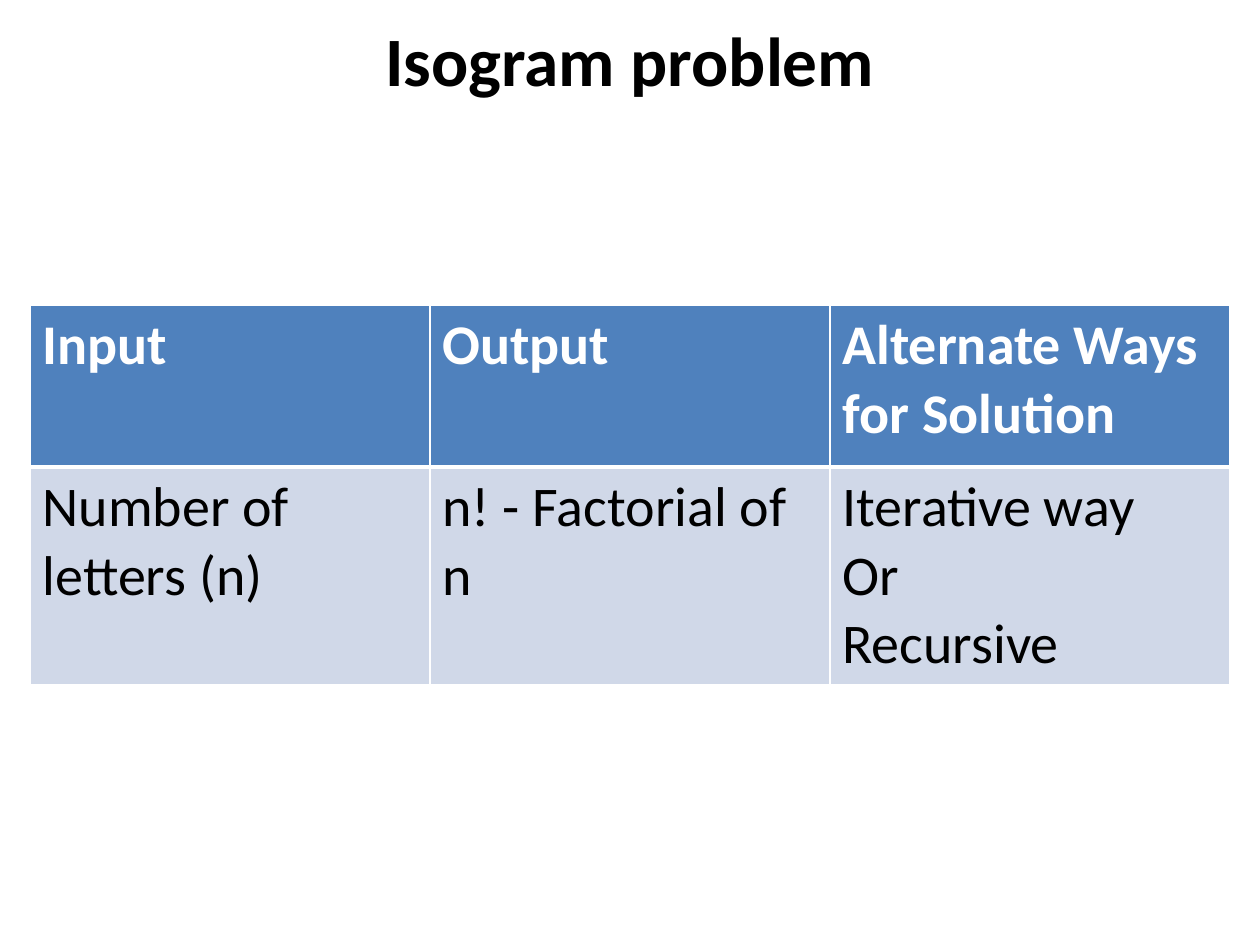
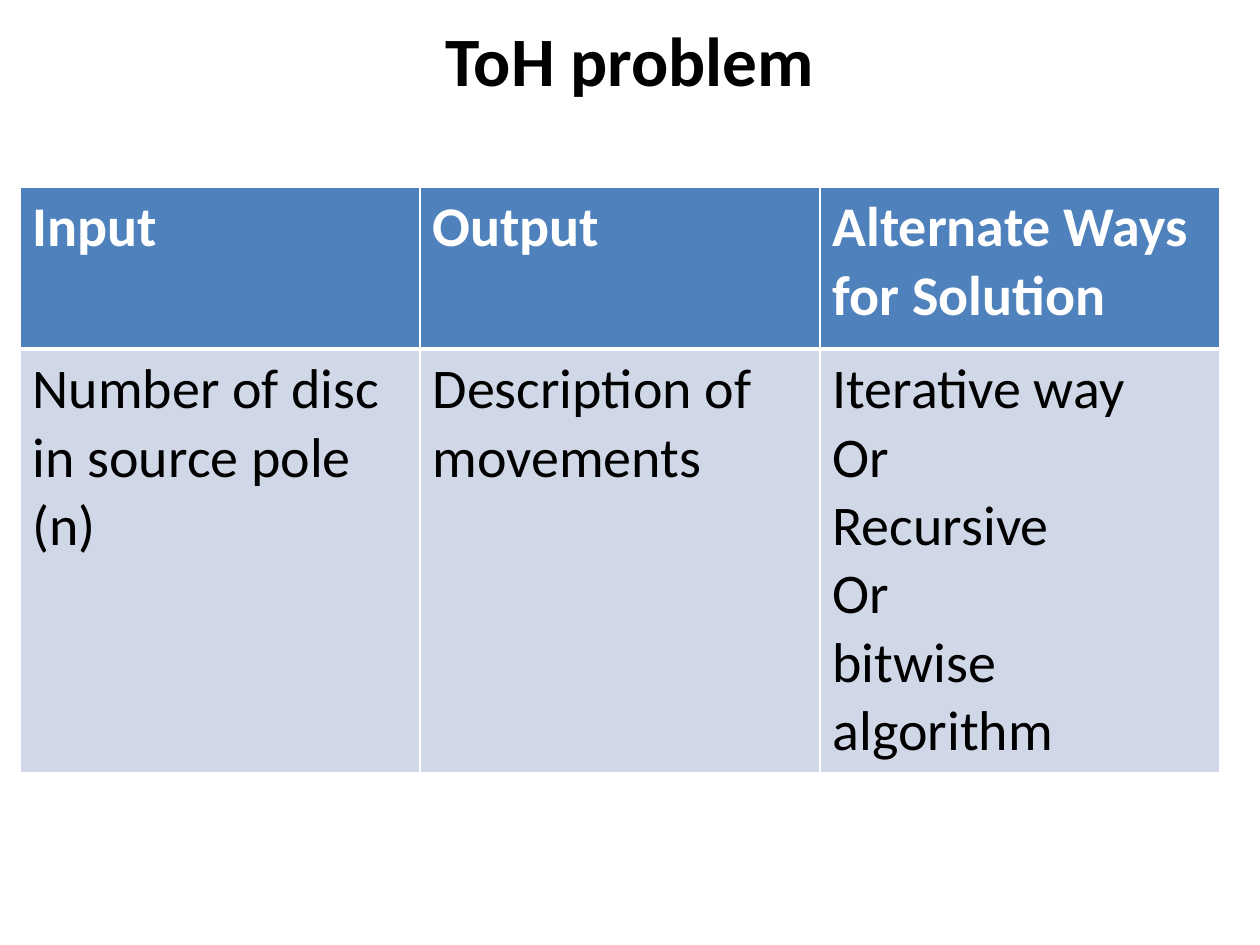
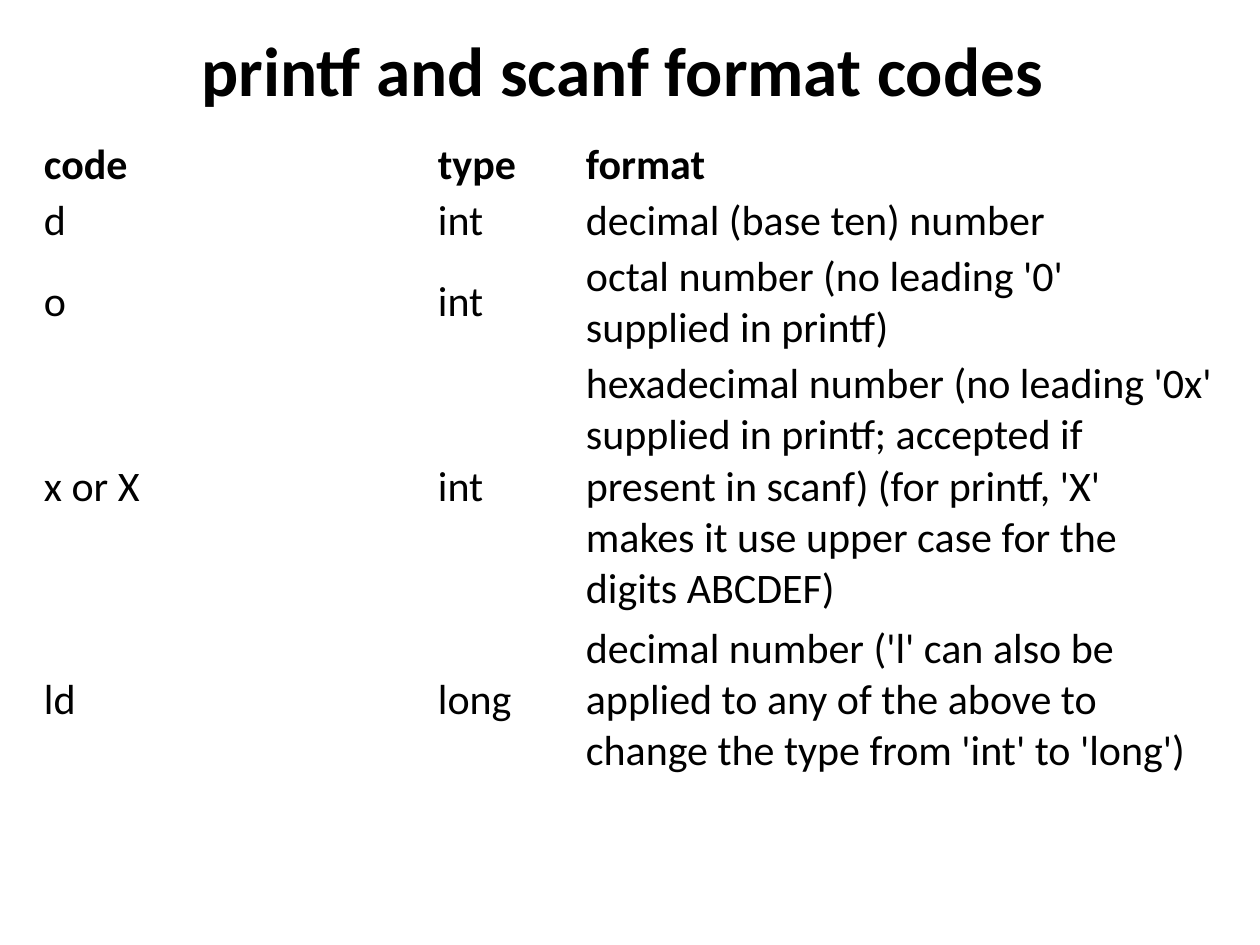
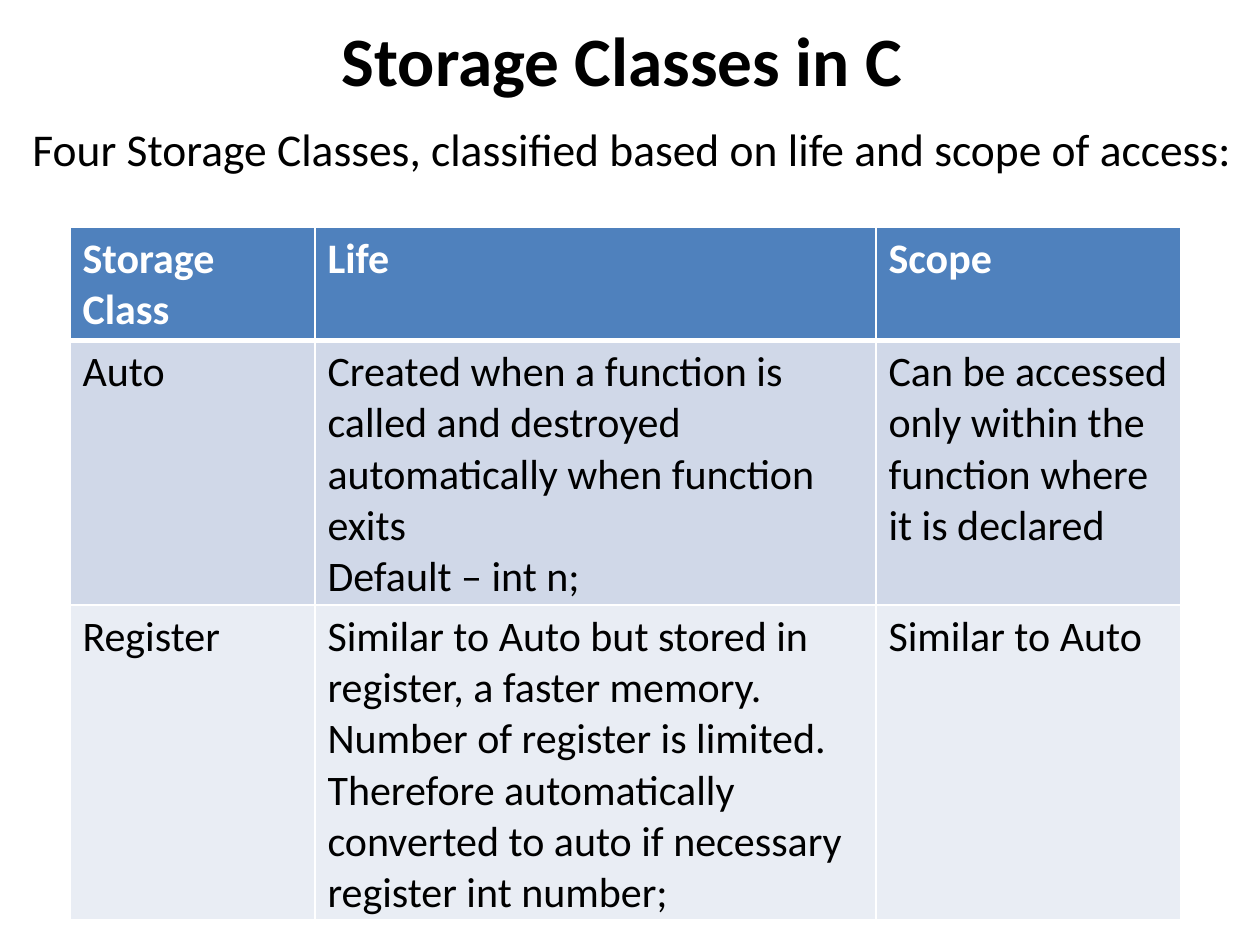
import pptx
import pptx.dml.color
import pptx.enum.text
import pptx.oxml
import pptx.oxml.ns
import pptx.util

EMU_PER_PX = 914400 / 126
FONT = "Calibri"
BLACK = "000000"
WHITE = "FFFFFF"
HEADER_FILL = "4F81BD"
BAND_FILLS = ["D0D8E8", "E9EDF4"]
TITLE_SIZE = 39.6
MIDDLE = pptx.enum.text.MSO_ANCHOR.MIDDLE
TOP = pptx.enum.text.MSO_ANCHOR.TOP
PROBLEM_HEADER = ["Input", "Output", "Alternate Ways for Solution"]
PROBLEM_COLUMNS = [400, 400, 400]


def px(length):
    return pptx.util.Emu(round(length * EMU_PER_PX))


def color(value):
    return pptx.dml.color.RGBColor.from_string(value)


def add_run(paragraph, text, size, text_color=BLACK, bold=False):
    run = paragraph.add_run()
    run.text = text
    run.font.name = FONT
    run.font.size = pptx.util.Pt(size)
    run.font.bold = bold
    run.font.color.rgb = color(text_color)


def add_titled_slide(presentation, text, left, top, width):
    slide = presentation.slides.add_slide(presentation.slide_layouts[5])
    title = slide.shapes.title
    title.left, title.top, title.width, title.height = map(px, (left, top, width, 98))
    frame = title.text_frame
    frame.auto_size = pptx.enum.text.MSO_AUTO_SIZE.NONE
    frame.vertical_anchor = MIDDLE
    paragraph = frame.paragraphs[0]
    paragraph.alignment = pptx.enum.text.PP_ALIGN.CENTER
    add_run(paragraph, text, TITLE_SIZE, bold=True)
    return slide


def add_text(slide, text, left, top, width, height, size, line_spacing):
    frame = slide.shapes.add_textbox(*map(px, (left, top, width, height))).text_frame
    frame.word_wrap = True
    frame.auto_size = pptx.enum.text.MSO_AUTO_SIZE.SHAPE_TO_FIT_TEXT
    paragraph = frame.paragraphs[0]
    paragraph.line_spacing = line_spacing
    add_run(paragraph, text, size)


def set_borders(cell, top_points, bottom_points):
    properties = cell._tc.get_or_add_tcPr()
    for side, points in (("L", 1), ("R", 1), ("T", top_points), ("B", bottom_points)):
        properties.append(pptx.oxml.parse_xml(
            f'<a:ln{side} {pptx.oxml.ns.nsdecls("a")} w="{pptx.util.Pt(points)}">'
            f'<a:solidFill><a:srgbClr val="{WHITE}"/></a:solidFill></a:ln{side}>'))


def fill_cell(cell, text, size, text_color, bold):
    frame = cell.text_frame
    for index, line in enumerate(text.split("\n")):
        paragraph = frame.add_paragraph() if index else frame.paragraphs[0]
        add_run(paragraph, line, size, text_color, bold)


def style_banded(cell, row_index):
    set_borders(cell, 3 if row_index == 1 else 1, 1 if row_index else 3)
    cell.vertical_anchor = TOP
    cell.fill.solid()
    fill = BAND_FILLS[(row_index - 1) % 2] if row_index else HEADER_FILL
    cell.fill.fore_color.rgb = color(fill)


def style_plain(cell):
    cell.vertical_anchor = MIDDLE
    cell.margin_left = cell.margin_right = px(5)
    cell.margin_top = cell.margin_bottom = px(2)
    cell.fill.background()


def add_table(slide, rows, left, top, widths, heights, size, banded=True):
    table = slide.shapes.add_table(
        len(rows), len(widths),
        *map(px, (left, top, sum(widths), sum(heights)))).table
    table.first_row = banded
    table.horz_banding = banded
    for column, width in zip(table.columns, widths):
        column.width = px(width)
    for row_index, (texts, height) in enumerate(zip(rows, heights)):
        table.rows[row_index].height = px(height)
        is_header = row_index == 0
        for column_index, text in enumerate(texts):
            cell = table.cell(row_index, column_index)
            if banded:
                style_banded(cell, row_index)
            else:
                style_plain(cell)
            text_color = WHITE if banded and is_header else BLACK
            fill_cell(cell, text, size, text_color, is_header)


def add_problem_slide(presentation, title, answers, left, top, answer_height):
    slide = add_titled_slide(presentation, title, 63, 10, 1134)
    add_table(slide, [PROBLEM_HEADER, answers], left, top,
              PROBLEM_COLUMNS, [162, answer_height], 32)


def add_format_codes_slide(presentation):
    slide = add_titled_slide(presentation, "printf and scanf format codes", 24, 20, 1197)
    rows = [
        ["code", "type", "format"],
        ["d", "int", "decimal (base ten) number"],
        ["o", "int", "octal number (no leading '0' supplied in printf)"],
        ["x or X", "int",
         "hexadecimal number (no leading '0x' supplied in printf; accepted if "
         "present in scanf) (for printf, 'X' makes it use upper case for the "
         "digits ABCDEF)"],
        ["ld", "long",
         "decimal number ('l' can also be applied to any of the above to "
         "change the type from 'int' to 'long')"],
    ]
    add_table(slide, rows, 39, 137, [394, 148, 640], [56, 56, 107, 262, 165], 24,
              banded=False)


def add_storage_classes_slide(presentation):
    slide = add_titled_slide(presentation, "Storage Classes in C", 24, 10, 1197)
    add_text(slide, "Four Storage Classes, classified based on life and scope of access:",
             20, 98, 1231, 84, 26, 1.3)
    rows = [
        ["Storage Class", "Life", "Scope"],
        ["Auto",
         "Created when a function is called and destroyed\n"
         "automatically when function exits\nDefault – int n;",
         "Can be accessed only within the function where it is declared"],
        ["Register",
         "Similar to Auto but stored in register, a faster memory. Number of "
         "register is limited. Therefore automatically converted to auto if "
         "necessary\nregister int number;",
         "Similar to Auto"],
    ]
    add_table(slide, rows, 70, 227, [245, 561, 305], [113, 264, 315], 24)


def main():
    presentation = pptx.Presentation()
    presentation.slide_width = px(1260)
    presentation.slide_height = px(945)
    add_problem_slide(
        presentation, "Isogram problem",
        ["Number of letters (n)", "n! - Factorial of n", "Iterative way\nOr\nRecursive"],
        30, 305, 216)
    add_problem_slide(
        presentation, "ToH problem",
        ["Number of disc in source pole (n)", "Description of movements",
         "Iterative way\nOr\nRecursive\nOr\nbitwise algorithm"],
        20, 187, 421)
    add_format_codes_slide(presentation)
    add_storage_classes_slide(presentation)
    presentation.save("out.pptx")


if __name__ == "__main__":
    main()
